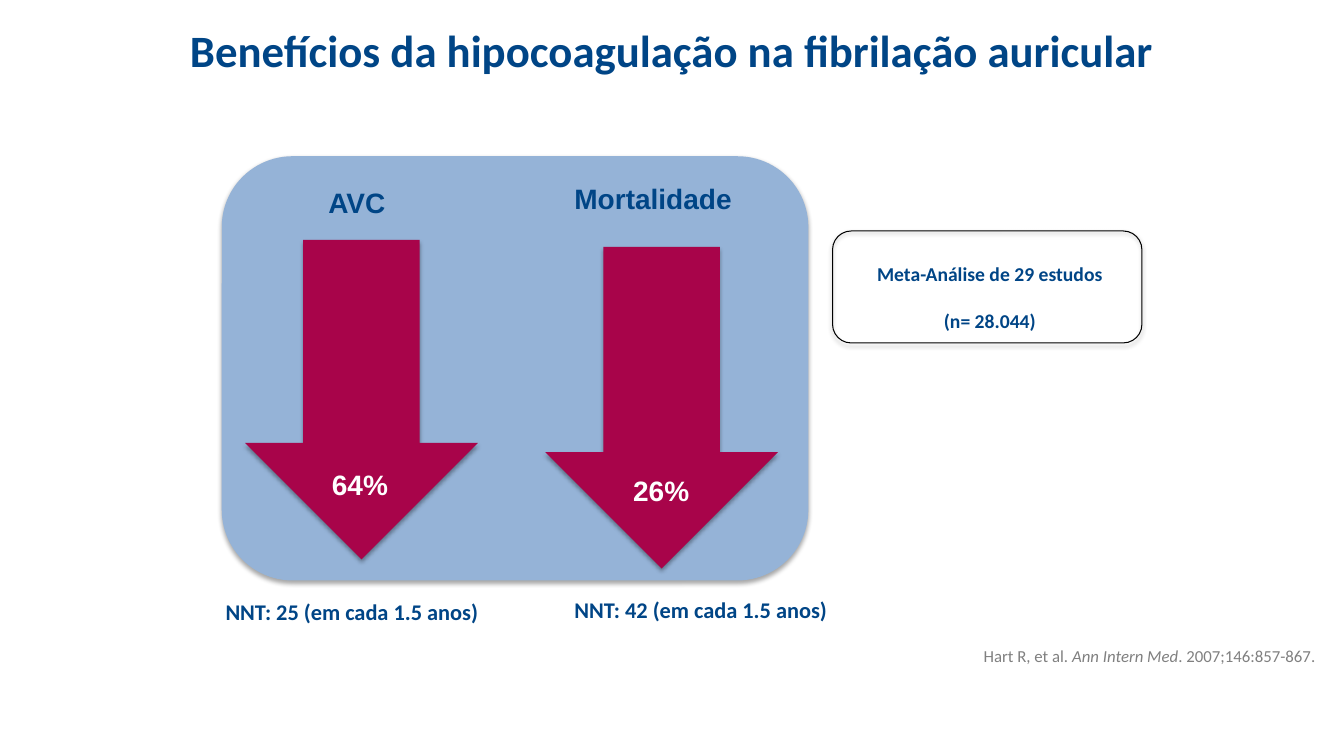
from lxml import etree
from pptx import Presentation
from pptx.dml.color import RGBColor
from pptx.enum.shapes import MSO_SHAPE
from pptx.enum.text import MSO_ANCHOR, PP_ALIGN
from pptx.oxml import parse_xml
from pptx.util import Pt

ROUNDED, ARROW = MSO_SHAPE.ROUNDED_RECTANGLE, MSO_SHAPE.DOWN_ARROW
TOP, MIDDLE = MSO_ANCHOR.TOP, MSO_ANCHOR.MIDDLE
LEFT, CENTER = PP_ALIGN.LEFT, PP_ALIGN.CENTER

BLUE, PALE_BLUE, CRIMSON = "004586", "95B3D7", "A8044A"
WHITE, GREY, BLACK = "FFFFFF", "808080", "000000"

SHADOW = (
    '<a:effectLst xmlns:a="http://schemas.openxmlformats.org/drawingml/2006/main">'
    '<a:outerShdw blurRad="39370" dist="22860" dir="5400000" rotWithShape="0">'
    '<a:srgbClr val="000000"><a:alpha val="35000"/></a:srgbClr>'
    '</a:outerShdw></a:effectLst>'
)

HEADING = {"name": "Calibri", "size": Pt(32), "bold": True, "color": BLUE}
LABEL = {"name": "Arial", "size": Pt(20), "bold": True, "color": BLUE}
PERCENT = {**LABEL, "color": WHITE}
STUDY = {"name": "Calibri", "size": Pt(14), "bold": True, "color": BLUE}
NNT = {**STUDY, "size": Pt(16)}
CITATION = {"name": "Calibri", "size": Pt(12), "bold": False, "color": GREY}


def write(box, lines, style, align=CENTER, anchor=MIDDLE, wrap=True, spacing=None):
    """Fill a box; each line is a list of (text, italic) spans."""
    frame = box.text_frame
    frame.word_wrap = wrap
    frame.vertical_anchor = anchor
    for index, spans in enumerate(lines):
        para = frame.add_paragraph() if index else frame.paragraphs[0]
        para.alignment = align
        para.space_before = Pt(0)
        para.line_spacing = spacing
        for text, italic in spans:
            span = para.add_run()
            span.text = text
            span.font.italic = italic
            for key, value in style.items():
                if key == "color":
                    span.font.color.rgb = RGBColor.from_string(value)
                else:
                    setattr(span.font, key, value)


def draw(page, kind, area, fill=None, line=None):
    """Add a preset shape with a soft shadow below it."""
    shape = page.shapes.add_shape(kind, *map(Pt, area))
    if fill:
        shape.fill.solid()
        shape.fill.fore_color.rgb = RGBColor.from_string(fill)
    else:
        shape.fill.background()
    if line:
        shape.line.color.rgb = RGBColor.from_string(line)
        shape.line.width = Pt(0.75)
    else:
        shape.line.fill.background()
    shape.shadow.inherit = False
    properties = shape.fill._xPr
    properties.replace(properties.find("{*}effectLst"), parse_xml(SHADOW))


deck = Presentation()
deck.slide_width, deck.slide_height = Pt(960), Pt(540)
page = deck.slides.add_slide(deck.slide_layouts[5])

# Title
title = page.shapes.title
title.left, title.top, title.width, title.height = Pt(48), Pt(12), Pt(864), Pt(47.5)
write(title, [[("Benefícios da hipocoagulação na fibrilação auricular", False)]], HEADING)

# Citation
citation = page.shapes.add_textbox(Pt(695.5), Pt(458), Pt(259), Pt(21.6))
write(citation, [[("Hart R, et al. ", False), ("Ann Intern Med", True),
                  (". 2007;146:857-867.", False)]], CITATION, LEFT, TOP, False)

# Panel with one arrow per outcome
draw(page, ROUNDED, (158.4, 111.6, 419, 303), PALE_BLUE)
outcomes = [
    # arrow area, then label, percentage and NNT texts with their areas
    ((175, 171.4, 166.3, 228.2), [
        ("AVC", LABEL, (140.4, 129, 229, 31.7)),
        ("64%", PERCENT, (142.6, 327, 229, 37.4)),
        ("NNT: 25 (em cada 1.5 anos)", NNT, (154, 423.4, 198, 26.6))]),
    ((389.5, 176.4, 166.3, 229.7), [
        ("Mortalidade", LABEL, (352, 126, 229, 31.7)),
        ("26%", PERCENT, (357.8, 331.2, 229, 37.4)),
        ("NNT: 42 (em cada 1.5 anos)", NNT, (403.2, 422, 198, 26.6))]),
]
for arrow_area, captions in outcomes:
    draw(page, ARROW, arrow_area, CRIMSON)
    for text, style, area in captions:
        box = page.shapes.add_textbox(*map(Pt, area))
        if style is NNT:
            write(box, [[(text, False)]], style, LEFT, TOP, False)
        else:
            write(box, [[(text, False)]], style)

# Study box
draw(page, ROUNDED, (594.7, 165, 221, 80), line=BLACK)
study = page.shapes.add_textbox(Pt(597.6), Pt(167), Pt(219), Pt(75))
write(study, [[("Meta-Análise de 29 estudos", False)], [("(n= 28.044)", False)]],
      STUDY, anchor=TOP, spacing=2.0)

deck.save("out.pptx")
